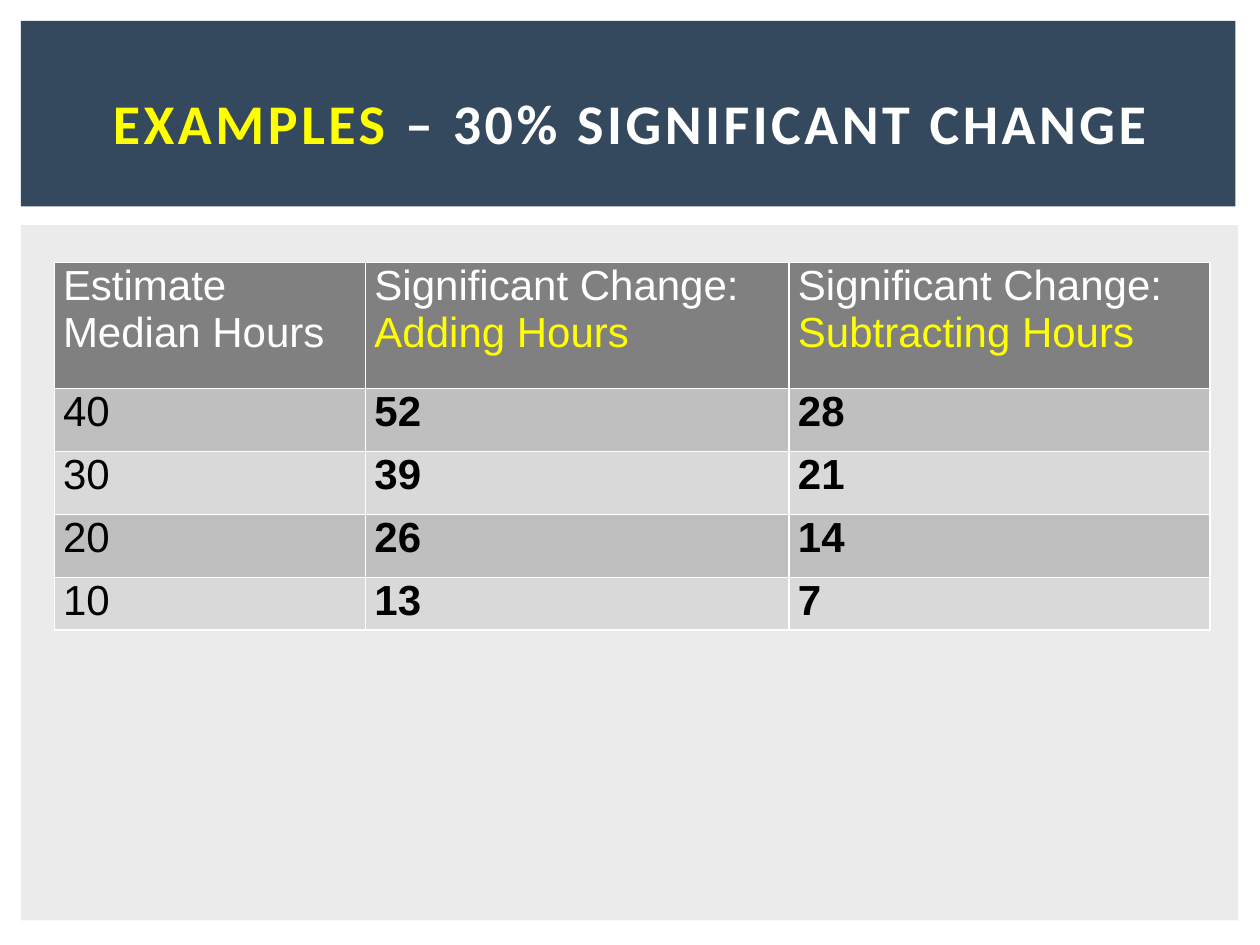
from lxml.etree import SubElement
from pptx import Presentation
from pptx.dml.color import RGBColor
from pptx.enum.shapes import MSO_SHAPE
from pptx.enum.text import MSO_ANCHOR, PP_ALIGN
from pptx.oxml.ns import qn
from pptx.util import Pt

WHITE, YELLOW, BLACK = "FFFFFF", "FFFF00", "000000"
NAVY, PALE = "34495D", "EBEBEB"
HEADER_FILL, ROW_FILLS = "808080", ("BFBFBF", "D9D9D9")


def color(hex_text):
    return RGBColor.from_string(hex_text)


class SlideBuilder:
    """Holds the text style and the slide being filled."""

    title_font, title_size, title_spacing = "Calibri", 32, 2
    table_font, table_size = "Arial", 24

    def __init__(self, slide):
        self.slide = slide

    def panel(self, left, top, width, height, fill):
        box = self.slide.shapes.add_shape(
            MSO_SHAPE.RECTANGLE, Pt(left), Pt(top), Pt(width), Pt(height))
        box.shadow.inherit = False
        box.fill.solid()
        box.fill.fore_color.rgb = color(fill)
        box.line.fill.background()

    def span(self, para, text, font, size, ink, bold):
        span = para.add_run()
        span.text = text
        span.font.name = font
        span.font.size = Pt(size)
        span.font.bold = bold
        span.font.color.rgb = color(ink)
        return span

    def title(self, left, top, width, height, parts):
        box = self.slide.shapes.add_textbox(Pt(left), Pt(top), Pt(width), Pt(height))
        frame = box.text_frame
        frame.word_wrap = True
        frame.vertical_anchor = MSO_ANCHOR.MIDDLE
        frame.margin_left = frame.margin_right = Pt(3.6)
        frame.margin_top = frame.margin_bottom = Pt(3.6)
        para = frame.paragraphs[0]
        para.alignment = PP_ALIGN.CENTER
        for text, ink in parts:
            span = self.span(para, text, self.title_font, self.title_size, ink, True)
            span.font._element.set("spc", str(self.title_spacing * 100))

    def cell(self, cell, paragraphs, fill, bold):
        """Fill a cell; each paragraph is a list of (text, colour) runs."""
        cell.margin_left = cell.margin_right = Pt(5)
        cell.margin_top = cell.margin_bottom = Pt(0)
        frame = cell.text_frame
        for index, parts in enumerate(paragraphs):
            para = frame.add_paragraph() if index else frame.paragraphs[0]
            for text, ink in parts:
                self.span(para, text, self.table_font, self.table_size, ink, bold)
        self.borders(cell)
        cell.fill.solid()
        cell.fill.fore_color.rgb = color(fill)

    def borders(self, cell):
        properties = cell._tc.get_or_add_tcPr()
        for side in ("lnL", "lnR", "lnT", "lnB"):
            line = SubElement(properties, qn(f"a:{side}"), w=str(Pt(1)))
            solid = SubElement(line, qn("a:solidFill"))
            SubElement(solid, qn("a:srgbClr"), val=WHITE)

    def table(self, left, top, widths, heights, header, rows):
        table = self.slide.shapes.add_table(
            len(heights), len(widths), Pt(left), Pt(top),
            Pt(sum(widths)), Pt(sum(heights))).table
        for column, width in zip(table.columns, widths):
            column.width = Pt(width)
        for row, height in zip(table.rows, heights):
            row.height = Pt(height)
        for column, paragraphs in enumerate(header):
            self.cell(table.cell(0, column), paragraphs, HEADER_FILL, False)
        for index, values in enumerate(rows):
            fill = ROW_FILLS[index % 2]
            for column, value in enumerate(values):
                self.cell(table.cell(index + 1, column),
                          [[(str(value), BLACK)]], fill, column > 0)


def main():
    deck = Presentation()
    deck.slide_width, deck.slide_height = Pt(720), Pt(540)
    page = SlideBuilder(deck.slides.add_slide(deck.slide_layouts[6]))

    page.panel(12, 128.7, 695.5, 397.3, PALE)
    page.panel(12, 12, 694, 106, NAVY)
    page.title(30, 3.6, 660, 131.8,
               [("EXAMPLES", YELLOW), (" – 30% SIGNIFICANT CHANGE", WHITE)])

    header = [
        [[("Estimate Median Hours", WHITE)]],
        [[("Significant Change:", WHITE)], [("Adding Hours", YELLOW)]],
        [[("Significant Change: ", WHITE), ("Subtracting Hours", YELLOW)]],
    ]
    rows = [(40, 52, 28), (30, 39, 21), (20, 26, 14), (10, 13, 7)]
    page.table(31, 150, [178, 242, 240.5], [72, 36, 36, 36, 30], header, rows)

    deck.save("out.pptx")


if __name__ == "__main__":
    main()
